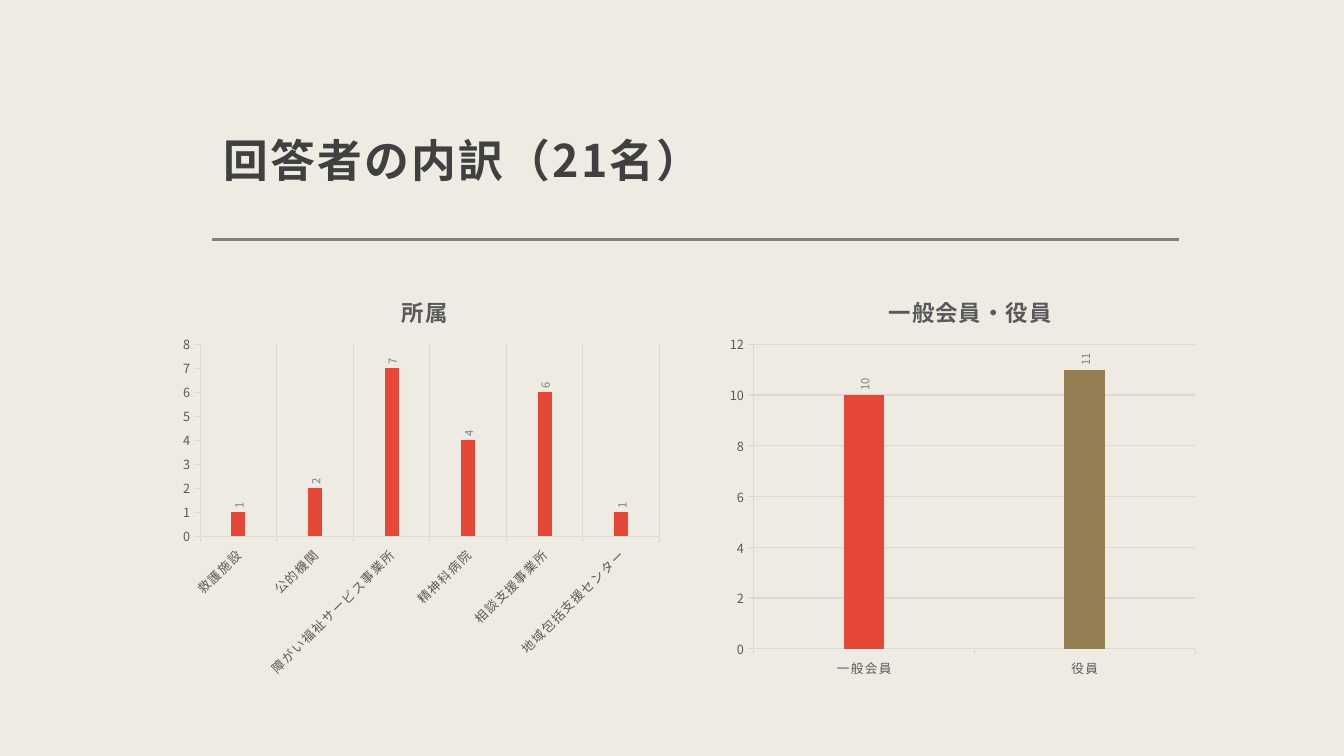
from lxml.etree import SubElement
from pptx import Presentation
from pptx.chart.data import CategoryChartData
from pptx.dml.color import RGBColor
from pptx.enum.chart import XL_CHART_TYPE, XL_LABEL_POSITION, XL_TICK_MARK
from pptx.enum.shapes import MSO_CONNECTOR
from pptx.enum.text import MSO_ANCHOR
from pptx.oxml import parse_xml
from pptx.oxml.ns import nsdecls, qn
from pptx.util import Inches, Pt

FONT = "Noto Sans CJK JP"
CREAM = RGBColor(0xEE, 0xEB, 0xE2)
INK = RGBColor(0x40, 0x40, 0x40)
AXIS_INK = RGBColor(0x59, 0x59, 0x59)
GRAY = RGBColor(0x80, 0x80, 0x80)
GRID = RGBColor(0xD9, 0xD9, 0xD9)
RED = RGBColor(0xE5, 0x48, 0x37)
OLIVE = RGBColor(0x94, 0x7F, 0x53)

LEFT, CONTENT_W = 2.1, 9.59
CHART_TOP, CHART_H = 2.67, 4.14


def style_font(font, size, color, bold=False, spacing=0):
    """Format a font for Latin and East Asian text; spacing is in points."""
    font.name, font.size, font.bold = FONT, Pt(size), bold
    font.color.rgb = color
    rpr = font._element if hasattr(font, "_element") else font._rPr
    if spacing:
        rpr.set("spc", str(int(spacing * 100)))
    ea = SubElement(rpr, qn("a:ea"))
    ea.set("typeface", FONT)
    rpr.find(qn("a:latin")).addnext(ea)


def write(tf, text, line_spacing=None, **fmt):
    p = tf.paragraphs[0]
    if line_spacing:
        p.line_spacing = line_spacing
    r = p.add_run()
    r.text = text
    style_font(r.font, **fmt)


def set_layout(element, x, y, w=None, h=None):
    """Place a chart title or plot area by shares of the chart's size."""
    for old in element.findall(qn("c:layout")):
        element.remove(old)
    inner = '<c:layoutTarget val="inner"/>' if w else ""
    size = f'<c:w val="{w}"/><c:h val="{h}"/>' if w else ""
    layout = parse_xml(
        f'<c:layout {nsdecls("c")}><c:manualLayout>{inner}'
        '<c:xMode val="edge"/><c:yMode val="edge"/>'
        f'<c:x val="{x}"/><c:y val="{y}"/>{size}</c:manualLayout></c:layout>')
    text = element.find(qn("c:tx"))
    if text is None:
        element.insert(0, layout)
    else:
        text.addnext(layout)


def style_axis(axis, gridlines, spacing=0, rotation=0):
    axis.major_tick_mark = XL_TICK_MARK.OUTSIDE
    axis.minor_tick_mark = XL_TICK_MARK.NONE
    axis.has_major_gridlines = gridlines
    lines = [axis.format.line]
    if gridlines:
        lines.append(axis.major_gridlines.format.line)
    for line in lines:
        line.color.rgb, line.width = GRID, Pt(0.75)
    style_font(axis.tick_labels.font, 9, AXIS_INK, spacing=spacing)
    rotate(axis._element, rotation)


def rotate(element, degrees):
    body = element.find(qn("c:txPr")).find(qn("a:bodyPr"))
    body.set("rot", str(degrees * 60000))
    body.set("vert", "horz")


def add_header(slide, text):
    box = slide.shapes.add_textbox(
        Inches(LEFT), Inches(0.48), Inches(CONTENT_W), Inches(1.47))
    tf = box.text_frame
    tf.word_wrap, tf.vertical_anchor = True, MSO_ANCHOR.BOTTOM
    tf.margin_left = tf.margin_right = tf.margin_top = Inches(0.12)
    tf.margin_bottom = Inches(0.1)
    write(tf, text, line_spacing=1.3, size=32, color=INK, bold=True, spacing=1.5)

    y = Inches(2.38)
    rule = slide.shapes.add_connector(
        MSO_CONNECTOR.STRAIGHT, Inches(LEFT), y, Inches(LEFT + CONTENT_W), y)
    rule.line.color.rgb, rule.line.width = GRAY, Pt(2)
    SubElement(rule._element.spPr, qn("a:effectLst"))


def add_bar_chart(slide, left, width, title, title_x, values, plot,
                  colors=(RED,), slant=0, vertical_grid=False, maximum=8, step=1):
    data = CategoryChartData()
    data.categories = list(values)
    data.add_series("Series 1", list(values.values()))
    chart = slide.shapes.add_chart(
        XL_CHART_TYPE.COLUMN_CLUSTERED, Inches(left), Inches(CHART_TOP),
        Inches(width), Inches(CHART_H), data).chart
    style_font(chart.font, 10, RGBColor(0, 0, 0))
    chart.has_legend = False
    chart.has_title = True
    write(chart.chart_title.text_frame, title,
          size=16, color=AXIS_INK, bold=True, spacing=1)
    set_layout(chart.chart_title._element, title_x, 0.05)
    set_layout(chart._chartSpace.chart.plotArea, *plot)

    style_axis(chart.category_axis, vertical_grid, spacing=1, rotation=slant)
    axis = chart.value_axis
    style_axis(axis, not vertical_grid)
    axis.minimum_scale, axis.maximum_scale, axis.major_unit = 0, maximum, step

    bars = chart.plots[0]
    bars.gap_width, bars.overlap, bars.vary_by_categories = 444, -90, False
    series = bars.series[0]
    series.format.fill.solid()
    series.format.fill.fore_color.rgb = colors[0]
    for i, color in enumerate(colors[1:], 1):
        fill = series.points[i].format.fill
        fill.solid()
        fill.fore_color.rgb = color
    labels = series.data_labels
    labels.show_value = True
    labels.position = XL_LABEL_POSITION.OUTSIDE_END
    style_font(labels.font, 8, GRAY)
    rotate(labels._element, -90)


def main():
    prs = Presentation()
    prs.slide_width, prs.slide_height = Inches(13.33), Inches(7.5)
    slide = prs.slides.add_slide(prs.slide_layouts[6])
    slide.background.fill.solid()
    slide.background.fill.fore_color.rgb = CREAM

    add_header(slide, "回答者の内訳（21名）")
    affiliation = {"救護施設": 1, "公的機関": 2, "障がい福祉サービス事業所": 7,
                   "精神科病院": 4, "相談支援事業所": 6, "地域包括支援センター": 1}
    add_bar_chart(slide, 1.74, 4.9, "所属", 0.45, affiliation,
                  plot=(0.05, 0.18, 0.93, 0.46), slant=-45, vertical_grid=True)
    add_bar_chart(slide, 7.14, 4.81, "一般会員・役員", 0.34,
                  {"一般会員": 10, "役員": 11}, plot=(0.07, 0.18, 0.91, 0.73),
                  colors=(RED, OLIVE), maximum=12, step=2)
    prs.save("out.pptx")


if __name__ == "__main__":
    main()
